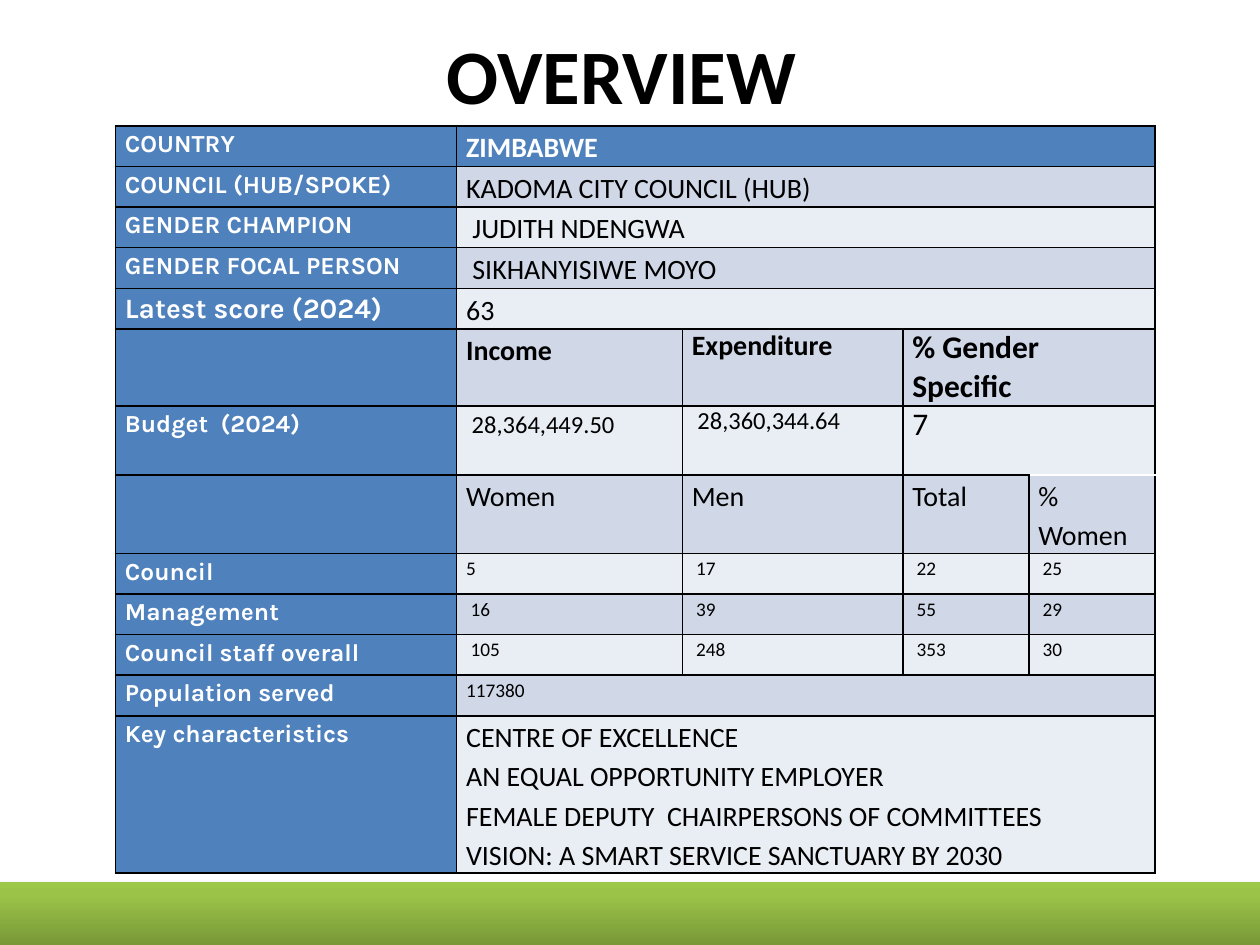
from copy import deepcopy
from lxml import etree
from pptx import Presentation
from pptx import util as u
from pptx.dml import color as c
from pptx.enum import shapes, text
from pptx.oxml import ns

HUE = {
    "ink": "000000", "white": "FFFFFF", "blue": "4F81BD",
    "odd": "D0D8E8", "even": "E9EDF4",
    "dark": "779737", "mid": "9BC348", "lime": "9DC746",
}
WIDTHS = [195, 129, 126, 72, 72]
ROWS = [
    ("COUNTRY", 23.2, 16, ["ZIMBABWE"]),
    ("COUNCIL (HUB/SPOKE)", 23.2, 16, ["KADOMA CITY COUNCIL (HUB)"]),
    ("GENDER CHAMPION", 23.2, 16, [" JUDITH NDENGWA"]),
    ("GENDER FOCAL PERSON", 23.2, 16, [" SIKHANYISIWE MOYO"]),
    ("Latest score (2024)", 23.2, 16, ["63"]),
    ("", 44, 16, ["Income", "Expenditure", "% Gender Specific"]),
    ("Budget  (2024)", 39.4, 14, [" 28,364,449.50", " 28,360,344.64", "7"]),
    ("", 45, 16, ["Women", "Men", "Total", "% Women"]),
    ("Council", 23.2, 11, ["5", " 17", " 22", " 25"]),
    ("Management", 23.2, 11, [" 16", " 39", " 55", " 29"]),
    ("Council staff overall", 23.2, 11, [" 105", " 248", " 353", " 30"]),
    ("Population served", 23.2, 11, ["117380"]),
    ("Key characteristics", 89.7, 16, [
        "CENTRE OF EXCELLENCE\nAN EQUAL OPPORTUNITY EMPLOYER\n"
        "FEMALE DEPUTY  CHAIRPERSONS OF COMMITTEES\n"
        "VISION: A SMART SERVICE SANCTUARY BY 2030"]),
]
HEAD, SCORE, SPLIT, MONEY, STAFF = 0, 4, 5, 6, 7


def rgb(name):
    return c.RGBColor.from_string(HUE[name])


def apply(item, vals):
    for key, val in vals.items():
        setattr(item, key, val)


def style(par, face, size, hue, bold):
    for run in par.runs:
        apply(run.font, {"name": face, "size": u.Pt(size), "bold": bold})
        run.font.color.rgb = rgb(hue)


def edge(cell, top, base):
    props = cell._tc.get_or_add_tcPr()
    for side, hue in zip("LRTB", ("ink", "ink", top, base)):
        line = etree.SubElement(props, ns.qn(f"a:ln{side}"), w=str(u.Pt(1)))
        fill = etree.SubElement(line, ns.qn("a:solidFill"))
        etree.SubElement(fill, ns.qn("a:srgbClr"), val=HUE[hue])


def paint(cell, fill):
    apply(cell, {"margin_left": u.Pt(5.4), "margin_right": u.Pt(5.4),
                 "margin_top": 0, "margin_bottom": 0})
    cell.fill.solid()
    cell.fill.fore_color.rgb = rgb(fill)


def write(cell, words, space, *font):
    if not words:
        return
    cell.text = words
    for par in cell.text_frame.paragraphs:
        par.line_spacing = space
        style(par, *font)


def add_title(slide, left, top, width, height):
    title = slide.shapes.title
    apply(title, {"left": u.Pt(left), "top": u.Pt(top),
                  "width": u.Pt(width), "height": u.Pt(height)})
    frame = title.text_frame
    frame.text = "OVERVIEW "
    frame.vertical_anchor = text.MSO_ANCHOR.MIDDLE
    par = frame.paragraphs[0]
    par.alignment = text.PP_ALIGN.CENTER
    style(par, "Calibri", 44, "ink", True)


def add_facts(slide, left, top):
    tall = sum(row[1] for row in ROWS)
    grid = slide.shapes.add_table(
        len(ROWS), len(WIDTHS), u.Pt(left), u.Pt(top),
        u.Pt(sum(WIDTHS)), u.Pt(tall)).table
    last = len(WIDTHS) - 1
    for col, width in zip(grid.columns, WIDTHS):
        col.width = u.Pt(width)
    for r, (label, height, size, vals) in enumerate(ROWS):
        grid.rows[r].height = u.Pt(height)
        band = "blue" if r == HEAD else "odd" if r % 2 else "even"
        for i in range(last + 1):
            cell = grid.cell(r, i)
            edge(cell, "white" if (r, i) == (STAFF, last) else "ink",
                 "white" if (r, i) == (MONEY, last) else "ink")
            paint(cell, band if i else "blue")
        if len(vals) < last:
            grid.cell(r, len(vals)).merge(grid.cell(r, last))
        write(grid.cell(r, 0), label, 1.15, "Karla",
              16 if r == SCORE else 14, "white", True)
        for i, words in enumerate(vals, 1):
            plain = r in (SPLIT, MONEY) and i > 1
            big = 18 if plain and i == 3 else size
            write(grid.cell(r, i), words, 1.0 if plain else 1.15, "Calibri",
                  big, "white" if r == HEAD else "ink", r in (HEAD, SPLIT))


def add_band(slide, left, top, width, height):
    band = slide.shapes.add_shape(
        shapes.MSO_SHAPE.RECTANGLE, u.Pt(left), u.Pt(top),
        u.Pt(width), u.Pt(height))
    band.line.fill.background()
    band.fill.gradient()
    band.fill.gradient_angle = 90
    stops = band._element.spPr.find(f".//{ns.qn('a:gsLst')}")
    stops.insert(1, deepcopy(stops[0]))
    marks = ((0, "dark"), (0.8, "mid"), (1, "lime"))
    for stop, (place, hue) in zip(band.fill.gradient_stops, marks):
        stop.position = place
        stop.color.rgb = rgb(hue)
    band.shadow.inherit = False
    glow = band._element.spPr.find(ns.qn("a:effectLst"))
    shade = etree.SubElement(
        glow, ns.qn("a:outerShdw"), blurRad=str(u.Pt(3.1)),
        dist=str(u.Pt(1.8)), dir="5400000", rotWithShape="0")
    tint = etree.SubElement(shade, ns.qn("a:srgbClr"), val=HUE["ink"])
    etree.SubElement(tint, ns.qn("a:alpha"), val="35000")


def main():
    deck = Presentation()
    apply(deck, {"slide_width": u.Pt(720), "slide_height": u.Pt(540)})
    slide = deck.slides.add_slide(deck.slide_layouts[5])
    add_title(slide, 36, 12, 648, 60)
    add_facts(slide, 66, 72)
    add_band(slide, 0, 504, 735, 36.7)
    deck.save("out.pptx")


if __name__ == "__main__":
    main()
